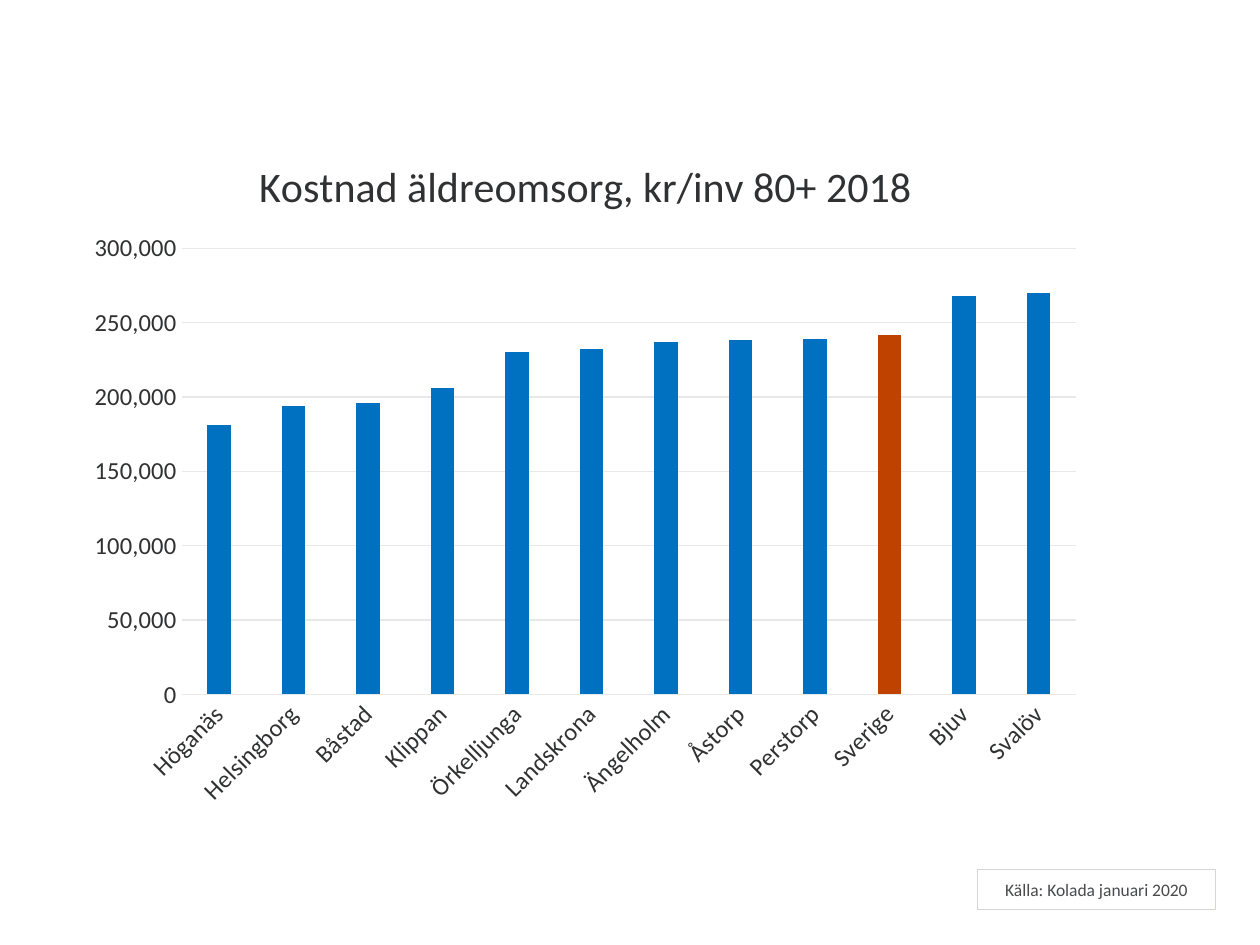
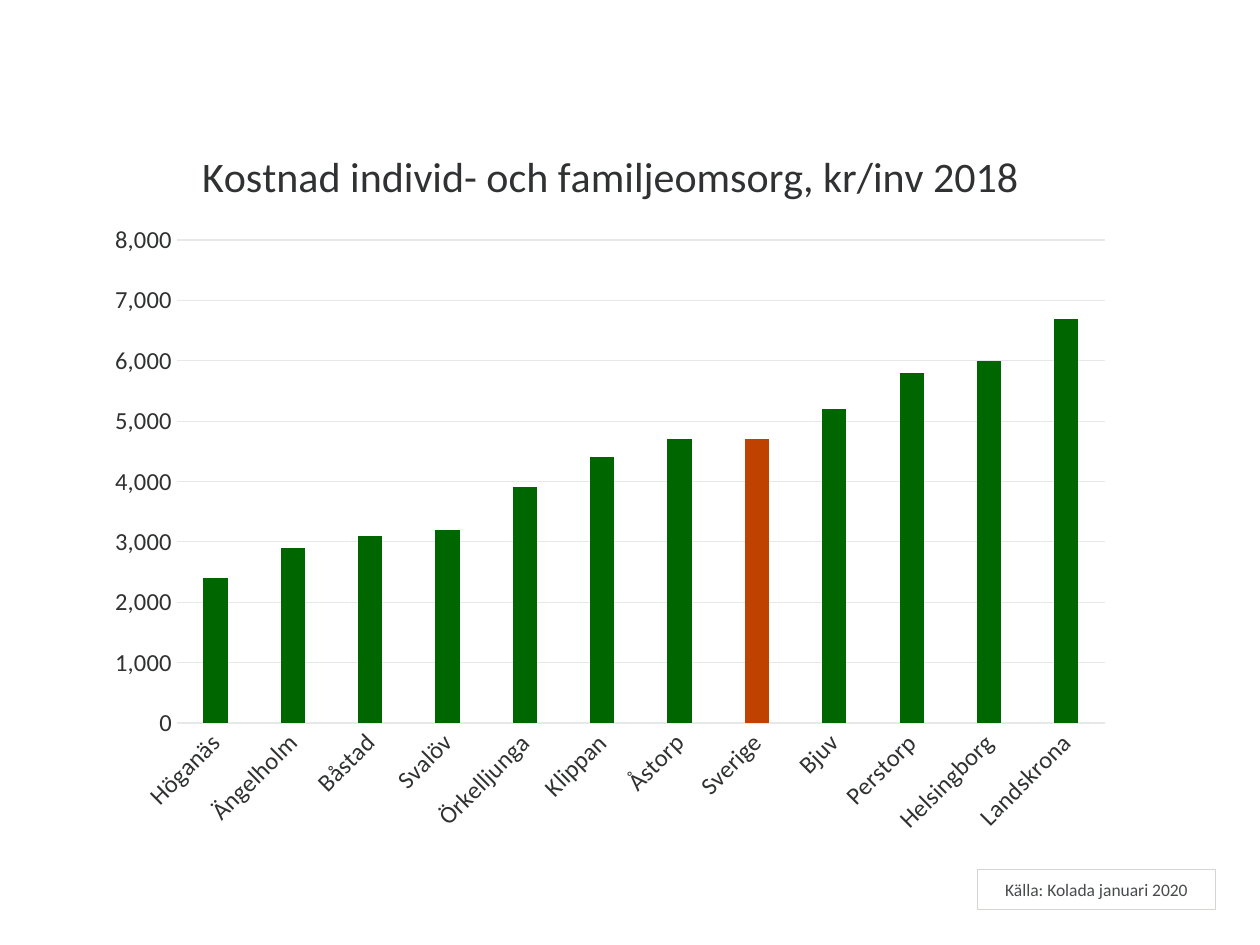
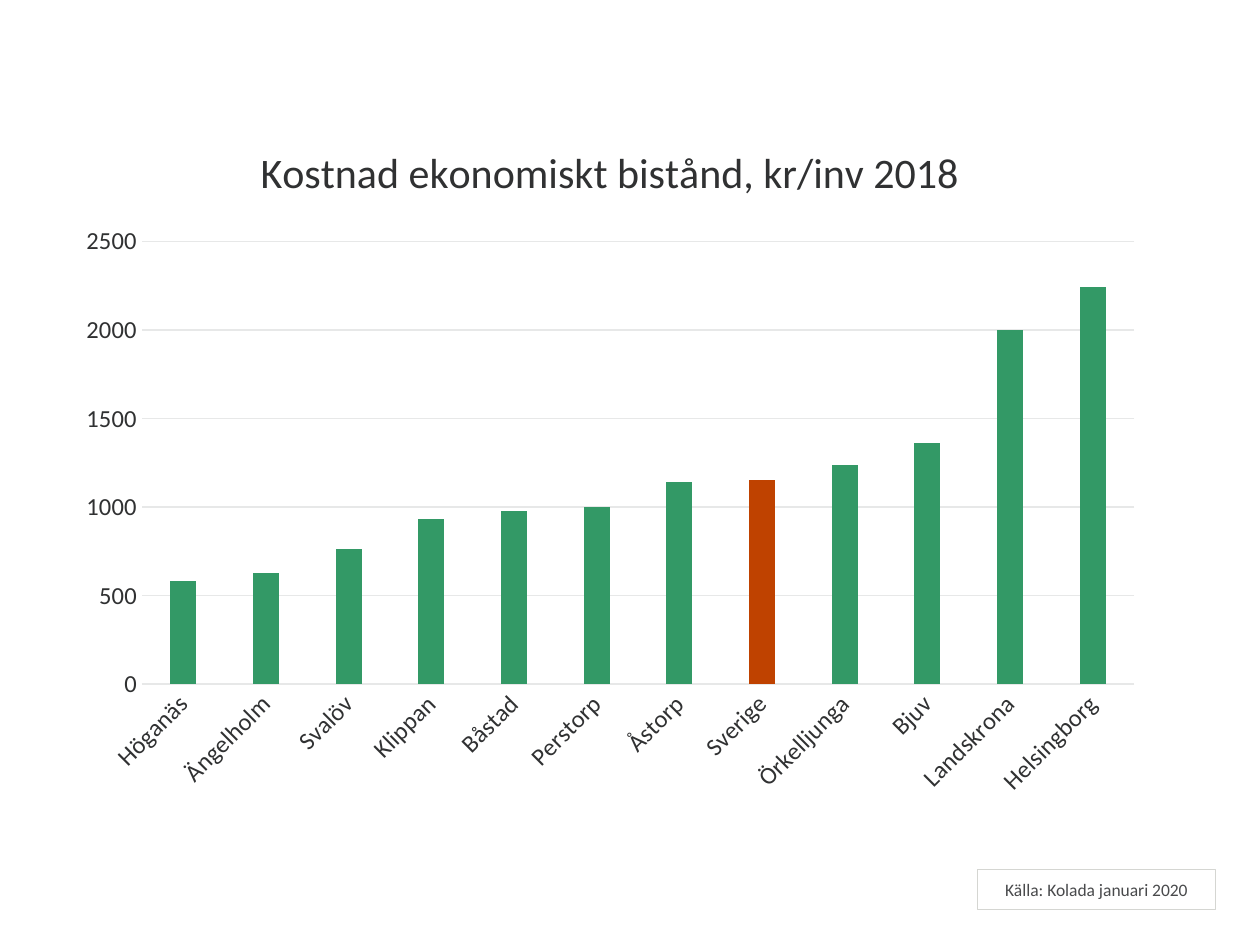
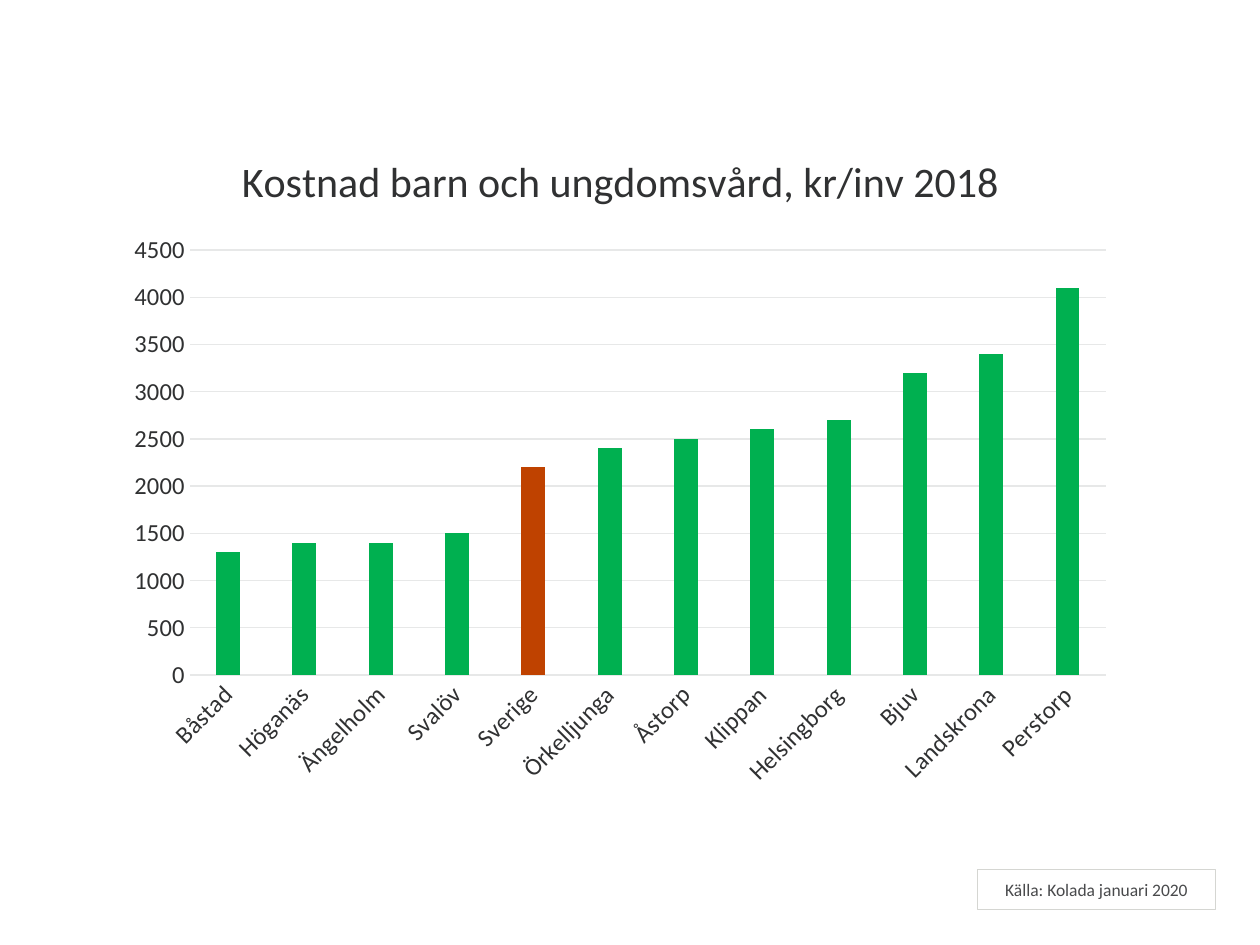
"""Build four column-chart slides comparing municipal care costs."""
from lxml import etree
from pptx import Presentation
from pptx.chart.data import CategoryChartData
from pptx.dml.color import RGBColor
from pptx.enum.chart import XL_CHART_TYPE, XL_TICK_MARK
from pptx.enum.shapes import MSO_SHAPE
from pptx.enum.text import MSO_ANCHOR, PP_ALIGN
from pptx.oxml.ns import qn
from pptx.util import Pt

COLUMN = XL_CHART_TYPE.COLUMN_CLUSTERED
NO_TICK = XL_TICK_MARK.NONE
RECTANGLE = MSO_SHAPE.RECTANGLE
MIDDLE = MSO_ANCHOR.MIDDLE
CENTER = PP_ALIGN.CENTER

FONT = "Calibri"
DARK, GREY, SOURCE_INK = "303132", "616365", "494A4C"
GRID, SOURCE_LINE, HIGHLIGHT = "E7E8E8", "D5D6D2", "BF4200"
HIGHLIGHTED = "Sverige"
SOURCE = "Källa: Kolada januari 2020"
SOURCE_AT = (558.4, 496.8, 136.2, 22.8)
BLANK_LAYOUT = 6

CHARTS = [
    {
        "title": "Kostnad äldreomsorg, kr/inv 80+ 2018",
        "frame": (42.5, 74.1, 584, 393.9), "plot": (103.8, 141.9, 511, 255),
        "color": "0070C0", "format": "#,##0", "top": 300000, "step": 50000,
        "costs": [
            ("Höganäs", 181000), ("Helsingborg", 194000), ("Båstad", 196000),
            ("Klippan", 206000), ("Örkelljunga", 230000), ("Landskrona", 232000),
            ("Ängelholm", 237000), ("Åstorp", 238000), ("Perstorp", 239000),
            ("Sverige", 242000), ("Bjuv", 268000), ("Svalöv", 270000),
        ],
    },
    {
        "title": "Kostnad individ- och familjeomsorg, kr/inv 2018",
        "frame": (49.5, 68.4, 598.7, 416.9), "plot": (101.1, 137.2, 530.4, 276),
        "color": "006600", "format": "#,##0", "top": 8000, "step": 1000,
        "costs": [
            ("Höganäs", 2400), ("Ängelholm", 2900), ("Båstad", 3100),
            ("Svalöv", 3200), ("Örkelljunga", 3900), ("Klippan", 4400),
            ("Åstorp", 4700), ("Sverige", 4700), ("Bjuv", 5200),
            ("Perstorp", 5800), ("Helsingborg", 6000), ("Landskrona", 6700),
        ],
    },
    {
        "title": "Kostnad ekonomiskt bistånd, kr/inv 2018",
        "frame": (36.7, 66, 623.5, 396.9), "plot": (81.1, 138, 567, 253),
        "color": "339966", "format": "General", "top": 2500, "step": 500,
        "costs": [
            ("Höganäs", 580), ("Ängelholm", 630), ("Svalöv", 760),
            ("Klippan", 930), ("Båstad", 980), ("Perstorp", 1000),
            ("Åstorp", 1140), ("Sverige", 1150), ("Örkelljunga", 1240),
            ("Bjuv", 1360), ("Landskrona", 2000), ("Helsingborg", 2240),
        ],
    },
    {
        "title": "Kostnad barn och ungdomsvård, kr/inv 2018",
        "frame": (65.4, 71.5, 578.2, 385.2), "plot": (108.5, 142.9, 523.4, 242.9),
        "color": "00B050", "format": "General", "top": 4500, "step": 500,
        "costs": [
            ("Båstad", 1300), ("Höganäs", 1400), ("Ängelholm", 1400),
            ("Svalöv", 1500), ("Sverige", 2200), ("Örkelljunga", 2400),
            ("Åstorp", 2500), ("Klippan", 2600), ("Helsingborg", 2700),
            ("Bjuv", 3200), ("Landskrona", 3400), ("Perstorp", 4100),
        ],
    },
]


def rgb(color):
    return RGBColor.from_string(color)


def style_font(font, size, color):
    font.name, font.size, font.bold = FONT, Pt(size), False
    font.color.rgb = rgb(color)


def style_line(line, color, width):
    line.color.rgb = rgb(color)
    line.width = Pt(width)


def add_run(paragraph, text, size, color):
    span = paragraph.add_run()
    span.text = text
    style_font(span.font, size, color)


def place_plot(chart, frame, plot):
    area = chart.element.xpath("c:chart/c:plotArea")[0]
    for old in area.findall(qn("c:layout")):
        area.remove(old)
    layout = etree.Element(qn("c:layout"))
    area.insert(0, layout)
    manual = etree.SubElement(layout, qn("c:manualLayout"))
    left, top, width, height = frame
    settings = {
        "layoutTarget": "inner", "xMode": "edge", "yMode": "edge",
        "x": (plot[0] - left) / width, "y": (plot[1] - top) / height,
        "w": plot[2] / width, "h": plot[3] / height,
    }
    for name, value in settings.items():
        etree.SubElement(manual, qn("c:" + name)).set("val", str(value))


def style_axes(chart, content):
    categories, values = chart.category_axis, chart.value_axis
    for axis in (categories, values):
        axis.major_tick_mark = axis.minor_tick_mark = NO_TICK
        style_font(axis.tick_labels.font, 14, DARK)
    style_line(categories.format.line, GRID, 0.75)
    chart.element.xpath(".//c:catAx/c:txPr/a:bodyPr")[0].set("rot", "-2700000")
    values.format.line.fill.background()
    values.has_major_gridlines = True
    style_line(values.major_gridlines.format.line, GRID, 0.75)
    values.minimum_scale, values.maximum_scale = 0, content["top"]
    values.major_unit = content["step"]
    values.tick_labels.number_format = content["format"]
    values.tick_labels.number_format_is_linked = False


def add_cost_chart(slide, content):
    names, costs = zip(*content["costs"])
    data = CategoryChartData()
    data.categories = names
    data.add_series(content["title"], costs)
    frame = content["frame"]
    chart = slide.shapes.add_chart(COLUMN, *map(Pt, frame), data).chart
    style_font(chart.font, 10, GREY)
    chart.has_legend = False
    chart.has_title = True
    chart.chart_title.include_in_layout = False
    heading = chart.chart_title.text_frame.paragraphs[0]
    add_run(heading, content["title"], 24, DARK)
    style_axes(chart, content)
    place_plot(chart, frame, content["plot"])
    bars = chart.plots[0]
    bars.gap_width, bars.overlap, bars.vary_by_categories = 219, -27, False
    series = bars.series[0]
    highlighted = series.points[names.index(HIGHLIGHTED)]
    for part, color in ((series, content["color"]), (highlighted, HIGHLIGHT)):
        part.format.fill.solid()
        part.format.fill.fore_color.rgb = rgb(color)


def add_source(slide):
    box = slide.shapes.add_shape(RECTANGLE, *map(Pt, SOURCE_AT))
    box.shadow.inherit = False
    box.fill.background()
    style_line(box.line, SOURCE_LINE, 0.25)
    box.text_frame.word_wrap = True
    box.text_frame.vertical_anchor = MIDDLE
    para = box.text_frame.paragraphs[0]
    para.alignment = CENTER
    add_run(para, SOURCE, 10, SOURCE_INK)


def main():
    deck = Presentation()
    deck.slide_width, deck.slide_height = Pt(720), Pt(540)
    for content in CHARTS:
        page = deck.slides.add_slide(deck.slide_layouts[BLANK_LAYOUT])
        add_cost_chart(page, content)
        add_source(page)
    deck.save("out.pptx")


if __name__ == "__main__":
    main()
